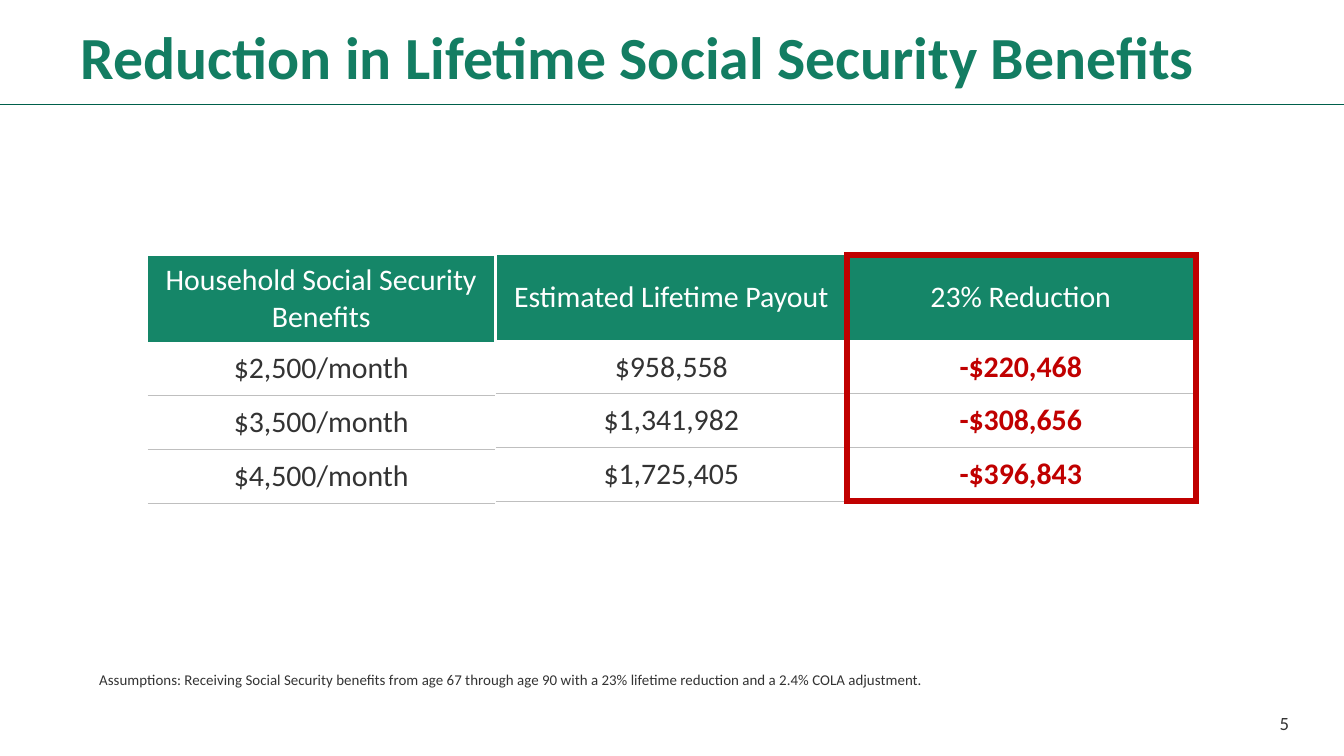
from lxml import etree
from pptx import Presentation
from pptx.dml.color import RGBColor
from pptx.enum import shapes, text
from pptx.oxml.ns import qn
from pptx.util import Inches, Pt

GREEN = RGBColor(0x15, 0x86, 0x68)
TITLE = RGBColor(0x13, 0x7D, 0x62)
RULE = RGBColor(0x00, 0x60, 0x4B)
INK = RGBColor(0x33, 0x33, 0x33)
RED = RGBColor(0xC0, 0x00, 0x00)
GRAY = RGBColor(0xBF, 0xBF, 0xBF)
WHITE = RGBColor(0xFF, 0xFF, 0xFF)
PLAIN = "{2D5ABB26-0587-4C30-8999-92F81FD0307C}"  # no style, no grid
LEFT, CENTER, RIGHT = (text.PP_ALIGN.LEFT, text.PP_ALIGN.CENTER,
                       text.PP_ALIGN.RIGHT)
HEIGHTS = (0.63, 0.4, 0.4, 0.4)

# left, width, white header edges, text colour, bold, texts
COLUMNS = [
    (1.1, 2.58, "LRT", INK, False,
     ("Household Social Security Benefits",
      "$2,500/month", "$3,500/month", "$4,500/month")),
    (3.69, 2.61, "LR", INK, False,
     ("Estimated Lifetime Payout", "$958,558", "$1,341,982", "$1,725,405")),
    (6.29, 2.61, "", RED, True,
     ("23% Reduction", "-$220,468", "-$308,656", "-$396,843")),
]


def write(frame, words, size, color=INK, bold=False, align=LEFT):
    para = frame.paragraphs[0]
    para.alignment = align
    run = para.add_run()
    run.text = words
    font = run.font
    font.name, font.size, font.bold = "Calibri", Pt(size), bold
    font.color.rgb = color
    return para


def add_title(slide, words):
    title = slide.shapes.title
    title.left, title.top = Inches(0.5), Inches(0.12)
    title.width, title.height = Inches(9.01), Inches(0.65)
    frame = title.text_frame
    frame.auto_size = text.MSO_AUTO_SIZE.NONE
    frame.vertical_anchor = text.MSO_ANCHOR.MIDDLE
    write(frame, words, 32, TITLE, bold=True).line_spacing = 0.9


def add_label(slide, words, x, y, w, h, size, **style):
    box = slide.shapes.add_textbox(Inches(x), Inches(y), Inches(w), Inches(h))
    frame = box.text_frame
    frame.word_wrap = False
    frame.auto_size = text.MSO_AUTO_SIZE.SHAPE_TO_FIT_TEXT
    write(frame, words, size, **style)


def add_rule(slide, y):
    rule = slide.shapes.add_connector(
        shapes.MSO_CONNECTOR.STRAIGHT,
        Inches(-0.03), Inches(y), Inches(10.08), Inches(y))
    rule.line.color.rgb = RULE
    rule.line.width = Pt(0.5)
    etree.SubElement(rule._element.spPr, qn("a:effectLst"))


def add_edge(cell, side, color):
    """Draw one cell border; call before the fill, in the order L, R, T, B."""
    edge = etree.SubElement(cell._tc.get_or_add_tcPr(), qn("a:ln" + side),
                            w=str(Pt(0.5)))
    fill = etree.SubElement(edge, qn("a:solidFill"))
    etree.SubElement(fill, qn("a:srgbClr"), val=str(color))


def add_column(slide, x, width, edges, color, bold, words):
    """Add one column of figures as a table of its own."""
    table = slide.shapes.add_table(
        len(words), 1, Inches(x), Inches(1.9),
        Inches(width), Inches(sum(HEIGHTS))).table
    table.first_row = table.horz_banding = False
    table._tbl.tblPr.find(qn("a:tableStyleId")).text = PLAIN
    table.columns[0].width = Inches(width)
    for i, (value, height) in enumerate(zip(words, HEIGHTS)):
        table.rows[i].height = Inches(height)
        cell = table.cell(i, 0)
        cell.vertical_anchor = text.MSO_ANCHOR.MIDDLE
        if i == 0:
            for side in edges:
                add_edge(cell, side, WHITE)
            cell.fill.solid()
            cell.fill.fore_color.rgb = GREEN
            write(cell.text_frame, value, 16, WHITE, align=CENTER)
        else:
            add_edge(cell, "B", GRAY)
            cell.fill.background()
            write(cell.text_frame, value, 16, color, bold, CENTER)


def add_frame(slide, x, y, w, h):
    frame = slide.shapes.add_shape(
        shapes.MSO_SHAPE.RECTANGLE, Inches(x), Inches(y), Inches(w), Inches(h))
    frame.shadow.inherit = False
    frame.fill.background()
    frame.line.color.rgb = RED
    frame.line.width = Pt(3.25)
    etree.SubElement(frame.line._get_or_add_ln(), qn("a:miter"), lim="800000")


def main():
    deck = Presentation()
    deck.slide_width = Inches(10)
    deck.slide_height = Inches(10 * 9 / 16)
    slide = deck.slides.add_slide(deck.slide_layouts[5])
    add_rule(slide, 0.78)
    add_title(slide, "Reduction in Lifetime Social Security Benefits")
    for column in COLUMNS:
        add_column(slide, *column)
    add_frame(slide, 6.3, 1.9, 2.6, 1.83)
    add_label(slide, "Assumptions: Receiving Social Security benefits from "
              "age 67 through age 90 with a 23% lifetime reduction and a "
              "2.4% COLA adjustment.", 0.64, 4.94, 6.56, 0.24, 8)
    add_label(slide, "5", 9.32, 5.25, 0.37, 0.27, 10, align=RIGHT)
    deck.save("out.pptx")


if __name__ == "__main__":
    main()
